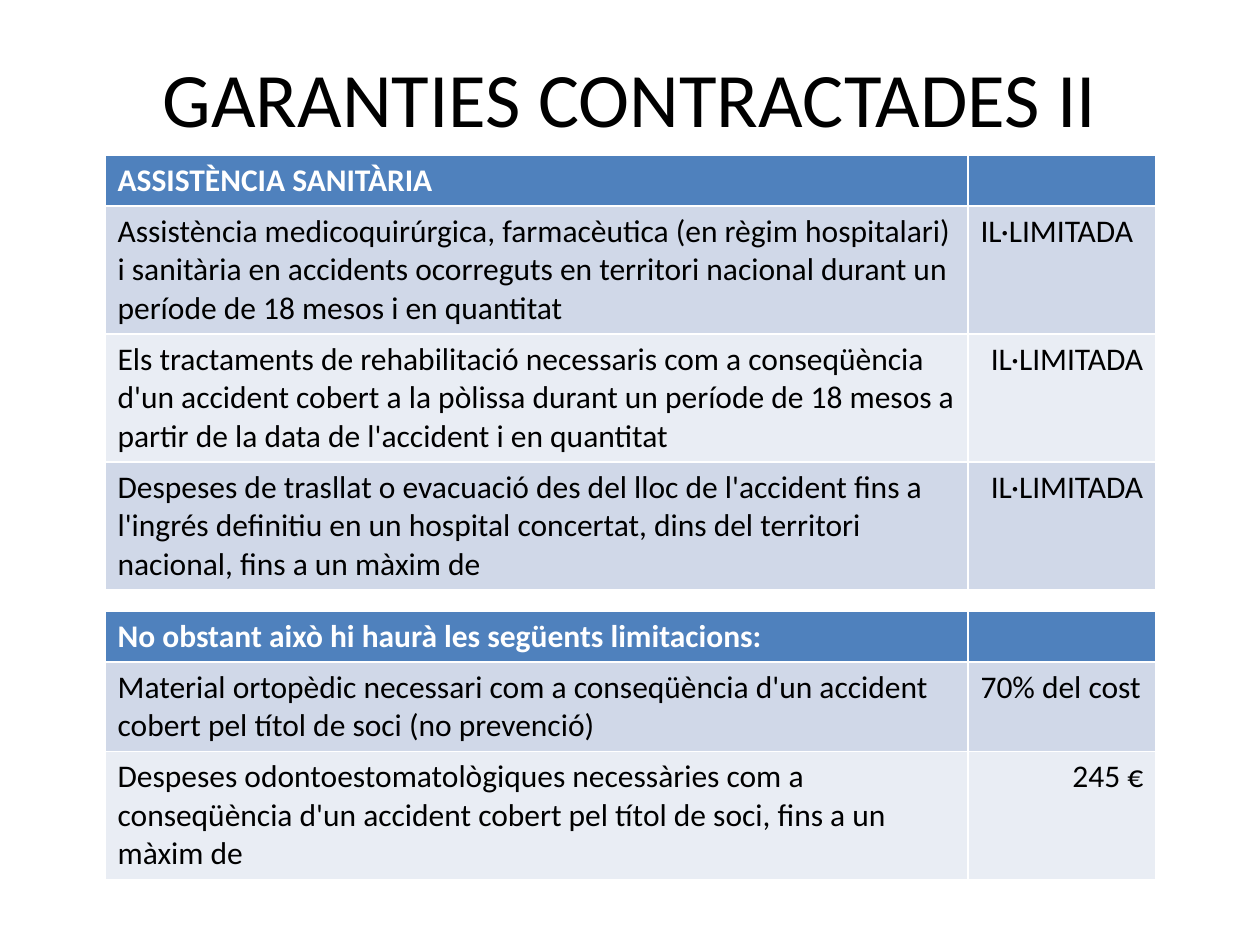
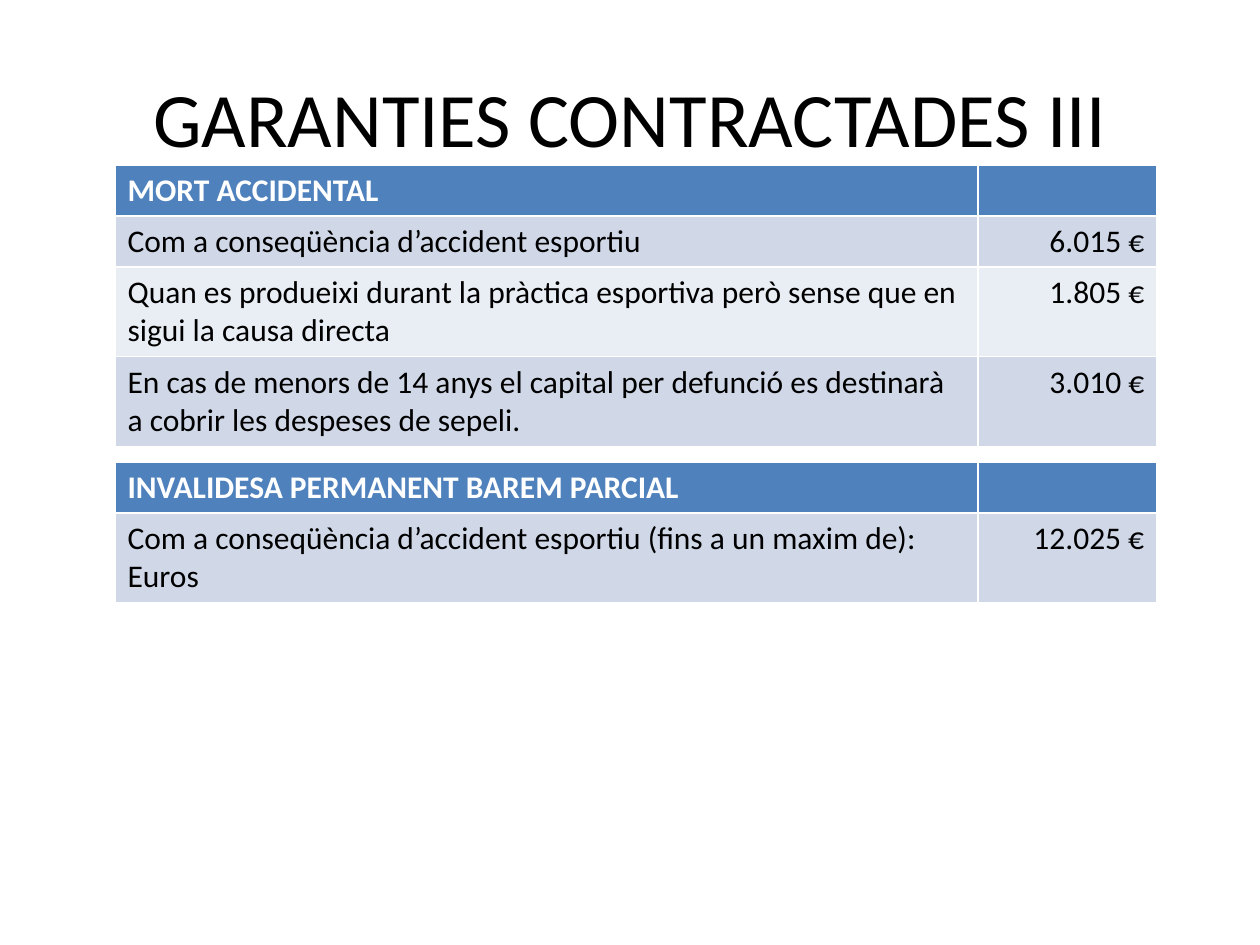
from dataclasses import dataclass

from pptx import Presentation
from pptx.dml.color import RGBColor as RGB
from pptx.enum.text import MSO_ANCHOR as ANCHOR, PP_ALIGN as ALIGN
from pptx.util import Emu, Pt

PX_PER_INCH = 126
TITLE_ONLY = 5


def px(n):
    return Emu(round(n * 914400 / PX_PER_INCH))


@dataclass(frozen=True)
class Theme:
    font: str = "Calibri"
    title_size: int = 44
    cell_size: int = 18
    text: RGB = RGB(0, 0, 0)
    header_text: RGB = RGB(255, 255, 255)
    header: RGB = RGB(0x4F, 0x81, 0xBD)
    bands: tuple = (RGB(0xD0, 0xD8, 0xE8), RGB(0xE9, 0xED, 0xF4))


class Deck:
    def __init__(self, theme):
        self.theme = theme
        self.prs = Presentation()
        self.prs.slide_width, self.prs.slide_height = px(1260), px(945)
        self.s = None

    def style(self, p, size, color, bold=False, align=ALIGN.LEFT):
        p.alignment = align
        for r in p.runs:
            r.font.name = self.theme.font
            r.font.size = Pt(size)
            r.font.bold = bold
            r.font.color.rgb = color

    def slide(self, title, title_height):
        self.s = self.prs.slides.add_slide(self.prs.slide_layouts[TITLE_ONLY])
        sp = self.s.shapes.title
        sp.left, sp.top, sp.width, sp.height = map(px, (63, 38, 1134, title_height))
        tf = sp.text_frame
        tf.text = title
        tf.vertical_anchor = ANCHOR.MIDDLE
        self.style(tf.paragraphs[0], self.theme.title_size, self.theme.text,
                   align=ALIGN.CENTER)

    def table(self, x, y, widths, heading, rows, left_values=()):
        """Draw a headed table; amounts align right except those in left_values.

        Rows start one line high and grow to fit their text; the white rules
        come from the default table style.
        """
        th = self.theme
        row_height = 51
        data = [(heading, ""), *rows]
        tbl = self.s.shapes.add_table(
            len(data), len(widths), px(x), px(y),
            px(sum(widths)), px(row_height * len(data))).table
        for col, width in zip(tbl.columns, widths):
            col.width = px(width)
        for i, values in enumerate(data):
            tbl.rows[i].height = px(row_height)
            is_header = i == 0
            fill = th.header if is_header else th.bands[(i - 1) % 2]
            color = th.header_text if is_header else th.text
            for j, value in enumerate(values):
                cell = tbl.cell(i, j)
                cell.fill.solid()
                cell.fill.fore_color.rgb = fill
                cell.text = value
                to_right = j == 1 and i - 1 not in left_values
                self.style(cell.text_frame.paragraphs[0], th.cell_size, color,
                           bold=is_header,
                           align=ALIGN.RIGHT if to_right else ALIGN.LEFT)


def main():
    deck = Deck(Theme())

    deck.slide("GARANTIES CONTRACTADES II", 117)
    widths = (863, 188)
    deck.table(105, 155, widths, "ASSISTÈNCIA SANITÀRIA", [
        ("Assistència medicoquirúrgica, farmacèutica (en règim hospitalari) "
         "i sanitària en accidents ocorreguts en territori nacional durant un "
         "període de 18 mesos i en quantitat", "IL·LIMITADA"),
        ("Els tractaments de rehabilitació necessaris com a conseqüència "
         "d'un accident cobert a la pòlissa durant un període de 18 mesos a "
         "partir de la data de l'accident i en quantitat", "IL·LIMITADA"),
        ("Despeses de trasllat o evacuació des del lloc de l'accident fins a "
         "l'ingrés definitiu en un hospital concertat, dins del territori "
         "nacional, fins a un màxim de", "IL·LIMITADA"),
    ], left_values=(0,))
    deck.table(105, 611, widths, "No obstant això hi haurà les següents limitacions:", [
        ("Material ortopèdic necessari com a conseqüència d'un accident "
         "cobert pel títol de soci (no prevenció)", "70% del cost"),
        ("Despeses odontoestomatològiques necessàries com a "
         "conseqüència d'un accident cobert pel títol de soci, fins a un "
         "màxim de", "245 €"),
    ], left_values=(0,))

    deck.slide("GARANTIES CONTRACTADES III", 157)
    widths = (863, 179)
    deck.table(115, 165, widths, "MORT ACCIDENTAL", [
        ("Com a conseqüència d’accident esportiu", "6.015 €"),
        ("Quan es produeixi durant la pràctica esportiva però sense que en "
         "sigui la causa directa", "1.805 €"),
        ("En cas de menors de 14 anys el capital per defunció es destinarà "
         "a cobrir les despeses de sepeli.", "3.010 €"),
    ])
    deck.table(115, 462, widths, "INVALIDESA PERMANENT BAREM PARCIAL", [
        ("Com a conseqüència d’accident esportiu (fins a un maxim de): Euros",
         "12.025 €"),
    ])

    deck.prs.save("out.pptx")


if __name__ == "__main__":
    main()
